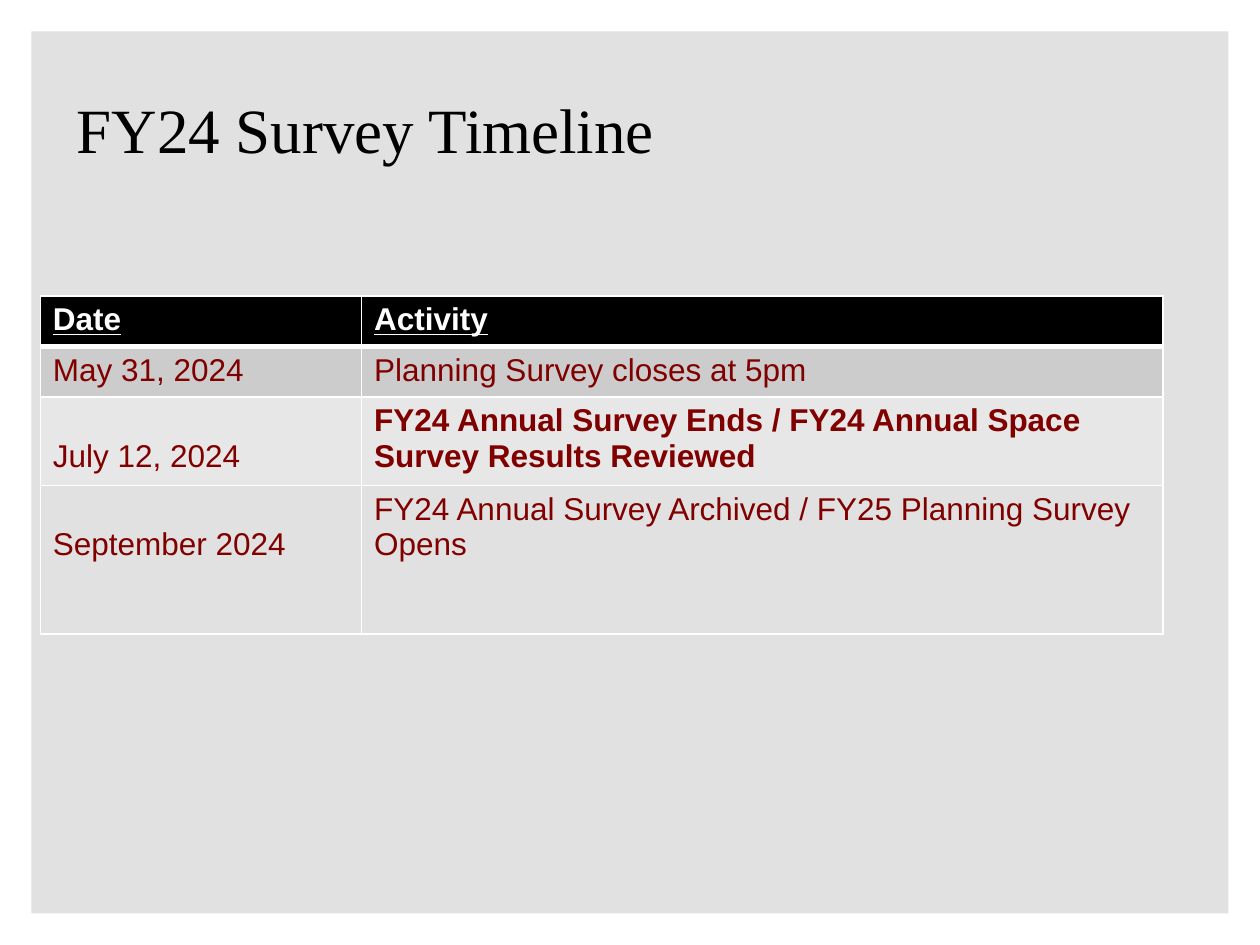
from lxml import etree
from pptx import Presentation
from pptx.dml.color import RGBColor
from pptx.enum.shapes import MSO_SHAPE
from pptx.enum.text import MSO_ANCHOR
from pptx.oxml.ns import qn
from pptx.util import Inches, Pt

RECTANGLE = MSO_SHAPE.RECTANGLE
MIDDLE = MSO_ANCHOR.MIDDLE

TITLE = "FY24 Survey Timeline"
ROWS = [
    {"cells": ("Date", "Activity"), "height": 0.38, "style": "header"},
    {"cells": ("May 31, 2024", "Planning Survey closes at 5pm"),
     "height": 0.38, "style": "dark"},
    {"cells": ("July 12, 2024",
               "FY24 Annual Survey Ends / FY24 Annual Space Survey Results Reviewed"),
     "height": 0.66, "style": "light", "bold_activity": True, "lower_date": True},
    {"cells": ("September 2024",
               "FY24 Annual Survey Archived / FY25 Planning Survey Opens"),
     "height": 1.18, "style": "clear", "lower_date": True},
]
COLUMN_WIDTHS = (2.55, 6.36)

THEME = {
    "panel": "E1E1E1",
    "title": "000000",
    "border": "FFFFFF",
    "title_font": "Times New Roman",
    "body_font": "Arial",
    "title_size": 36,
    "body_size": 18,
    "fills": {"header": "000000", "dark": "CCCCCC", "light": "E7E7E7", "clear": None},
    "header_text": "FFFFFF",
    "body_text": "800000",
}

SLIDE_WIDTH, SLIDE_HEIGHT = 10, 7.5
PANEL_MARGIN = 0.25
TABLE_LEFT, TABLE_TOP = 0.32, 2.35
CELL_MARGIN, LINE_HEIGHT = 0.05, 0.28


def add_run(paragraph, text, font_name, size, color, bold=False, underline=False):
    run = paragraph.add_run()
    run.text = text
    font = run.font
    font.name = font_name
    font.size = Pt(size)
    font.bold = bold
    font.underline = underline
    font.color.rgb = RGBColor.from_string(color)


def add_panel(slide):
    panel = slide.shapes.add_shape(
        RECTANGLE, Inches(PANEL_MARGIN), Inches(PANEL_MARGIN),
        Inches(SLIDE_WIDTH - 2 * PANEL_MARGIN), Inches(SLIDE_HEIGHT - 2 * PANEL_MARGIN))
    panel.shadow.inherit = False
    panel.fill.solid()
    panel.fill.fore_color.rgb = RGBColor.from_string(THEME["panel"])
    panel.line.fill.background()


def add_title(slide):
    box = slide.shapes.add_textbox(Inches(0.51), Inches(0.48), Inches(7.91), Inches(1.07))
    frame = box.text_frame
    frame.word_wrap = True
    frame.vertical_anchor = MIDDLE
    add_run(frame.paragraphs[0], TITLE, THEME["title_font"],
            THEME["title_size"], THEME["title"])


def set_borders(cell, widths):
    properties = cell._tc.get_or_add_tcPr()
    for side, width in zip("LRTB", widths):
        line = etree.SubElement(properties, qn(f"a:ln{side}"), w=str(Pt(width)))
        fill = etree.SubElement(line, qn("a:solidFill"))
        etree.SubElement(fill, qn("a:srgbClr"), val=THEME["border"])


def fill_cell(cell, row_index, column_index):
    row = ROWS[row_index]
    is_header = row["style"] == "header"
    top_width = 3 if row_index == 1 else 1
    set_borders(cell, (1, 1, top_width, 3 if is_header else 1))
    color = THEME["fills"][row["style"]]
    if color:
        cell.fill.solid()
        cell.fill.fore_color.rgb = RGBColor.from_string(color)
    else:
        cell.fill.background()
    is_lowered = column_index == 0 and row.get("lower_date", False)
    cell.margin_top = Inches(CELL_MARGIN + (LINE_HEIGHT if is_lowered else 0))
    is_bold = is_header or (column_index == 1 and row.get("bold_activity", False))
    add_run(cell.text_frame.paragraphs[0], row["cells"][column_index],
            THEME["body_font"], THEME["body_size"],
            THEME["header_text"] if is_header else THEME["body_text"],
            is_bold, is_header)


def add_timeline(slide):
    table = slide.shapes.add_table(
        len(ROWS), len(COLUMN_WIDTHS), Inches(TABLE_LEFT), Inches(TABLE_TOP),
        Inches(sum(COLUMN_WIDTHS)), Inches(sum(row["height"] for row in ROWS))).table
    table.horz_banding = False
    table.first_row = False
    for column, width in zip(table.columns, COLUMN_WIDTHS):
        column.width = Inches(width)
    for row_index, row in enumerate(ROWS):
        table.rows[row_index].height = Inches(row["height"])
        for column_index in range(len(COLUMN_WIDTHS)):
            fill_cell(table.cell(row_index, column_index), row_index, column_index)


def main():
    presentation = Presentation()
    presentation.slide_width = Inches(SLIDE_WIDTH)
    presentation.slide_height = Inches(SLIDE_HEIGHT)
    slide = presentation.slides.add_slide(presentation.slide_layouts[6])
    add_panel(slide)
    add_title(slide)
    add_timeline(slide)
    presentation.save("out.pptx")


if __name__ == "__main__":
    main()
